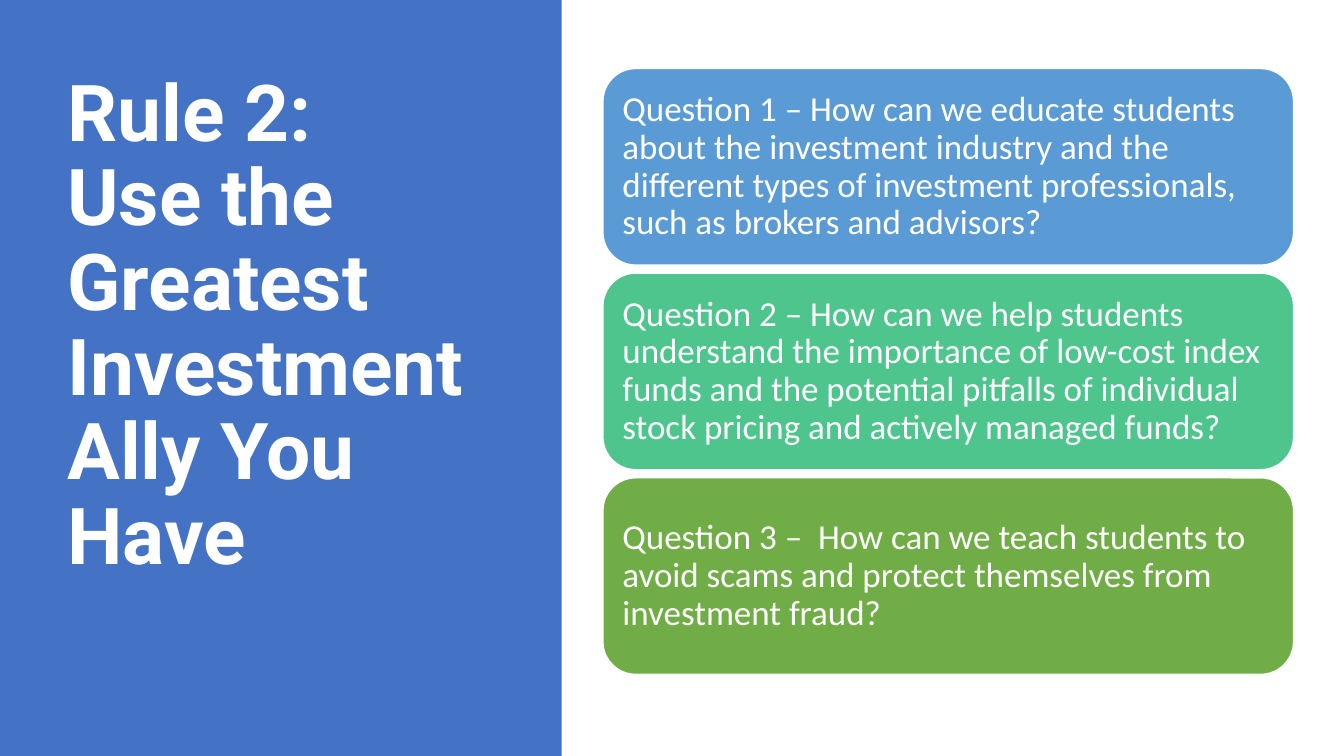
"""Build the slide for Rule 2 with a title panel and three question cards."""
import pptx
import pptx.dml.color
import pptx.enum.shapes
import pptx.enum.text
import pptx.util

Inches = pptx.util.Inches
RGBColor = pptx.dml.color.RGBColor
Anchor = pptx.enum.text.MSO_ANCHOR
Shape = pptx.enum.shapes.MSO_SHAPE

WHITE = RGBColor(0xFF, 0xFF, 0xFF)
PANEL_BLUE = RGBColor(0x44, 0x72, 0xC4)
SKY_BLUE = RGBColor(0x5B, 0x9B, 0xD5)
MINT = RGBColor(0x4D, 0xC5, 0x8D)
GREEN = RGBColor(0x70, 0xAD, 0x47)

WIDTH, HEIGHT = 13.33, 7.5
PANEL_WIDTH = 5.57
TOP = 0.68
CARD_LEFT, CARD_WIDTH, CARD_HEIGHT = 5.98, 6.85, 1.95
CARD_PITCH = 2.03

TITLE = "Rule 2:\vUse the Greatest Investment Ally You Have"
QUESTIONS = [
    (SKY_BLUE, "Question 1 – How can we educate students about the investment industry "
               "and the different types of investment professionals, such as brokers and advisors?"),
    (MINT, "Question 2 – How can we help students understand the importance of low-cost index "
           "funds and the potential pitfalls of individual stock pricing and actively managed funds?"),
    (GREEN, "Question 3 –  How can we teach students to avoid scams and protect themselves "
            "from investment fraud?"),
]
TITLE_FONT = {"name": "Roboto", "size": pptx.util.Pt(56), "bold": True}
CARD_FONT = {"name": "Calibri", "size": pptx.util.Pt(25), "bold": False}


def write(box, text, anchor, font):
    """Fill a box with one left-aligned white paragraph."""
    frame = box.text_frame
    frame.word_wrap = True
    frame.vertical_anchor = anchor
    frame.text = text
    para = frame.paragraphs[0]
    para.alignment = pptx.enum.text.PP_ALIGN.LEFT
    para.line_spacing = 0.9
    for span in para.runs:
        for key, value in font.items():
            setattr(span.font, key, value)
        span.font.color.rgb = WHITE


def add_block(page, kind, color, *place):
    """Add a filled shape without a shadow."""
    block = page.shapes.add_shape(kind, *map(Inches, place))
    block.shadow.inherit = False
    block.fill.solid()
    block.fill.fore_color.rgb = color
    return block


deck = pptx.Presentation()
deck.slide_width, deck.slide_height = Inches(WIDTH), Inches(HEIGHT)
page = deck.slides.add_slide(deck.slide_layouts[6])

panel = add_block(page, Shape.RECTANGLE, PANEL_BLUE, 0, 0, PANEL_WIDTH, HEIGHT)
panel.line.fill.background()

title = page.shapes.add_textbox(*map(Inches, (0.57, TOP, 4.16, 6.02)))
write(title, TITLE, Anchor.TOP, TITLE_FONT)

for row, (color, question) in enumerate(QUESTIONS):
    card = add_block(page, Shape.ROUNDED_RECTANGLE, color,
                     CARD_LEFT, TOP + row * CARD_PITCH, CARD_WIDTH, CARD_HEIGHT)
    card.line.color.rgb = WHITE
    card.line.width = pptx.util.Pt(1)
    for side in ("left", "right", "top", "bottom"):
        setattr(card.text_frame, f"margin_{side}", Inches(0.1))
    write(card, question, Anchor.MIDDLE, CARD_FONT)

deck.save("out.pptx")
